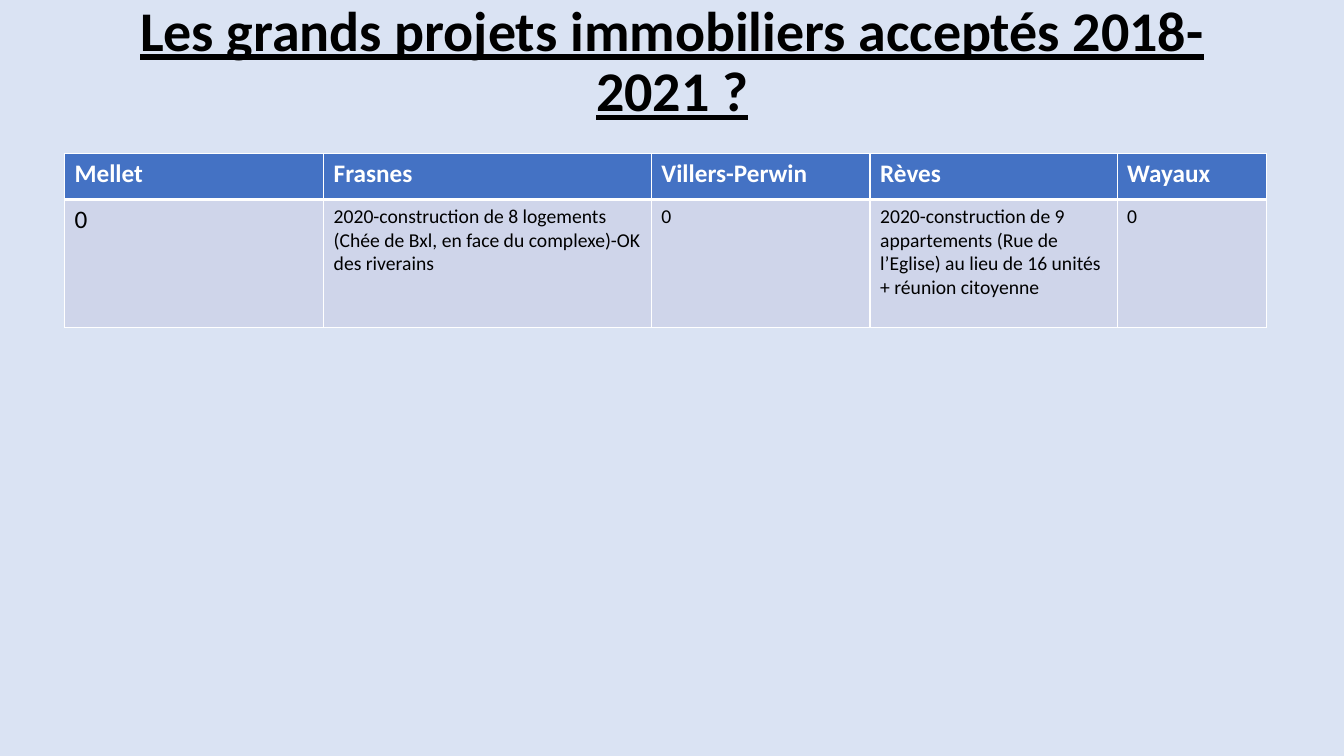
from pptx import Presentation
from pptx.dml.color import RGBColor
from pptx.enum.text import MSO_ANCHOR, PP_ALIGN
from pptx.oxml.ns import qn
from pptx.util import Inches, Pt
from lxml.etree import SubElement

WHITE, BLACK, BLUE, PALE = "FFFFFF", "000000", "4472C4", "CFD5EA"


def tint(code):
    return RGBColor.from_string(code)


class Deck:
    font = "Calibri"

    def __init__(self, wide, high, back):
        self.show = Presentation()
        self.show.slide_width, self.show.slide_height = Inches(wide), Inches(high)
        self.slide = self.show.slides.add_slide(self.show.slide_layouts[6])
        fill = self.slide.background.fill
        fill.solid()
        fill.fore_color.rgb = tint(back)

    def style(self, para, size, color, bold=False):
        font = para.font
        font.name, font.size, font.bold = self.font, Pt(size), bold
        font.color.rgb = tint(color)

    def title(self, box, text, size):
        frame = self.slide.shapes.add_textbox(*map(Inches, box)).text_frame
        frame.word_wrap = True
        frame.vertical_anchor = MSO_ANCHOR.BOTTOM
        para = frame.paragraphs[0]
        para.text = text
        para.alignment = PP_ALIGN.CENTER
        para.line_spacing = 0.9
        self.style(para, size, BLACK, True)
        para.font.underline = True

    def edges(self, cell, widths):
        props = cell._tc.get_or_add_tcPr()
        for side, width in widths.items():
            line = SubElement(props, qn("a:ln" + side), w=str(Pt(width)))
            fill = SubElement(line, qn("a:solidFill"))
            SubElement(fill, qn("a:srgbClr"), val=WHITE)

    def cell(self, cell, text, size, color, fill, widths, bold):
        self.edges(cell, widths)
        cell.fill.solid()
        cell.fill.fore_color.rgb = tint(fill)
        para = cell.text_frame.paragraphs[0]
        para.text = text
        self.style(para, size, color, bold)

    def table(self, left, top, cols, rows, head, body):
        box = map(Inches, (left, top, sum(cols), sum(rows)))
        grid = self.slide.shapes.add_table(len(rows), len(cols), *box).table
        grid.horz_banding = False
        for col, wide in zip(grid.columns, cols):
            col.width = Inches(wide)
        for row, high in zip(grid.rows, rows):
            row.height = Inches(high)
        # Thick rule between the header and the body
        for i, name in enumerate(head):
            self.cell(grid.cell(0, i), name, 18, WHITE, BLUE,
                      {"L": 1, "R": 1, "T": 1, "B": 3}, True)
        for i, (text, size) in enumerate(body):
            self.cell(grid.cell(1, i), text, size, BLACK, PALE,
                      {"L": 1, "R": 1, "T": 3, "B": 1}, False)


def main():
    deck = Deck(13.33, 7.5, "DAE3F3")

    # Title
    deck.title((0.64, 0.21, 12.05, 1.07),
               "Les grands projets immobiliers acceptés 2018-2021 ?", 40)

    # Projects by village
    deck.table(
        0.64, 1.52, (2.57, 3.25, 2.17, 2.45, 1.48), (0.46, 1.27),
        ("Mellet", "Frasnes", "Villers-Perwin", "Rèves", "Wayaux"),
        (("0", 18),
         ("2020-construction de 8 logements (Chée de Bxl, en face du "
          "complexe)-OK des riverains", 14),
         ("0", 14),
         ("2020-construction de 9 appartements (Rue de l’Eglise) au lieu "
          "de 16 unités + réunion citoyenne", 14),
         ("0", 14)))

    deck.show.save("out.pptx")


if __name__ == "__main__":
    main()
